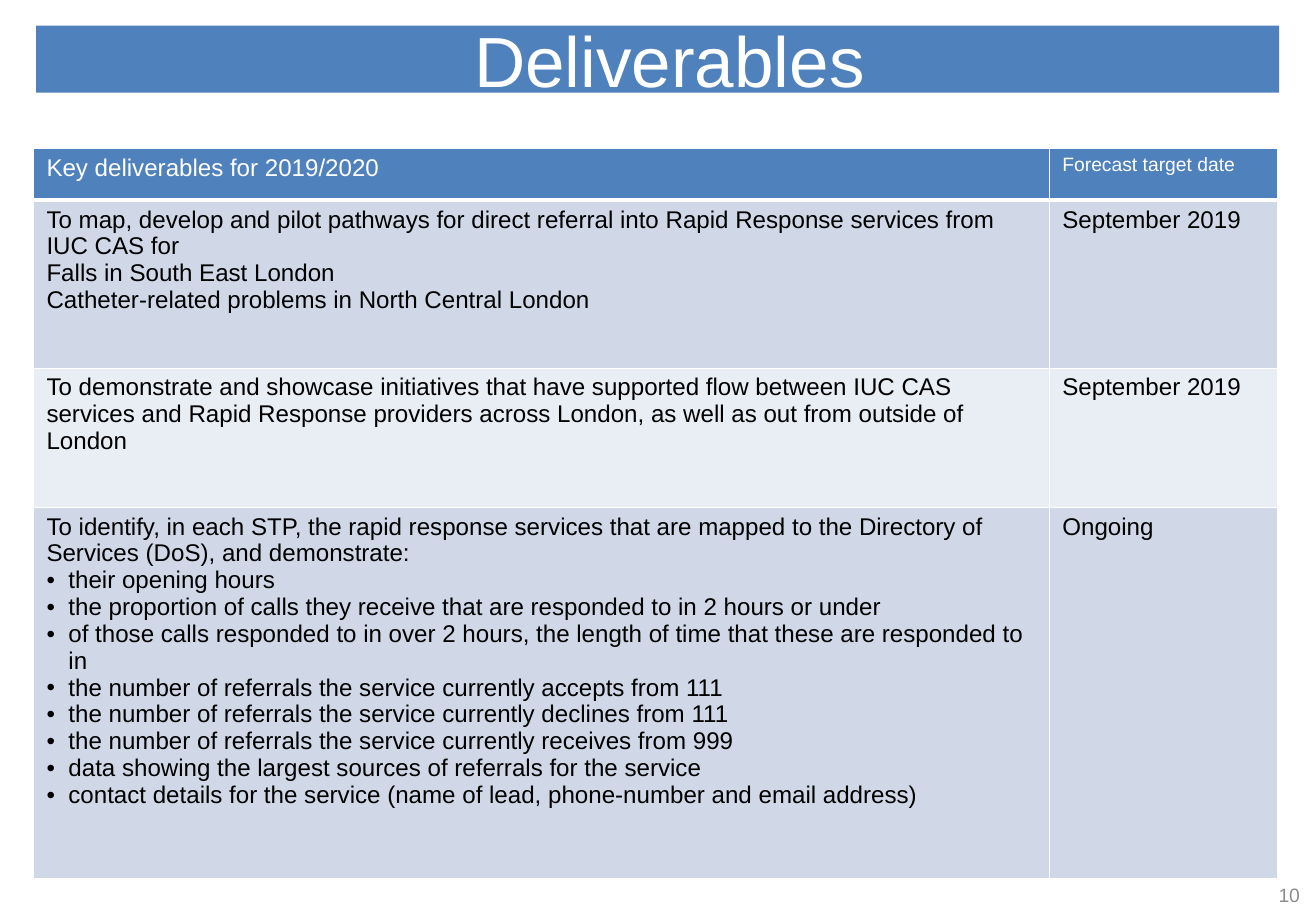
from lxml import etree
from pptx import Presentation
from pptx.dml.color import RGBColor
from pptx.enum.text import MSO_ANCHOR, MSO_AUTO_SIZE, PP_ALIGN
from pptx.oxml.ns import qn
from pptx.util import Cm, Pt

MIDDLE, TOP = MSO_ANCHOR.MIDDLE, MSO_ANCHOR.TOP
LEFT, CENTER, RIGHT = PP_ALIGN.LEFT, PP_ALIGN.CENTER, PP_ALIGN.RIGHT
FIXED = MSO_AUTO_SIZE.NONE

COLORS = {"blue": "4F81BD", "dark": "D0D8E8", "light": "E9EDF4",
          "white": "FFFFFF", "black": "000000", "gray": "8C8C8C"}
PAD = {"margin_left": Cm(0.28), "margin_right": Cm(0.28),
       "margin_top": Cm(0.13), "margin_bottom": Cm(0.13)}
FRAME = {**PAD, "word_wrap": True, "auto_size": FIXED, "vertical_anchor": MIDDLE}
CELL = {**PAD, "margin_bottom": Cm(0.38), "vertical_anchor": TOP}
INDENT = Cm(0.48)

WIDTHS = [22.27, 5]
HEIGHTS = [1.14, 3.68, 3.05, 8.13]
ROWS = [
    (["Key deliverables for 2019/2020"], "Forecast target date"),
    (["To map, develop and pilot pathways for direct referral into Rapid Response "
      "services from IUC CAS for",
      "Falls in South East London",
      "Catheter-related problems in North Central London"], "September 2019"),
    (["To demonstrate and showcase initiatives that have supported flow between "
      "IUC CAS services and Rapid Response providers across London, as well as "
      "out from outside of London"], "September 2019"),
    (["To identify, in each STP, the rapid response services that are mapped to "
      "the Directory of Services (DoS), and demonstrate:",
      "• their opening hours",
      "• the proportion of calls they receive that are responded to in 2 hours or under",
      "• of those calls responded to in over 2 hours, the length of time that these "
      "are responded to in",
      "• the number of referrals the service currently accepts from 111",
      "• the number of referrals the service currently declines from 111",
      "• the number of referrals the service currently receives from 999",
      "• data showing the largest sources of referrals for the service",
      "• contact details for the service (name of lead, phone-number and email address)"],
     "Ongoing"),
]


def apply(item, values):
    for name, value in values.items():
        setattr(item, name, value)


def paint(fill, color):
    fill.solid()
    fill.fore_color.rgb = RGBColor.from_string(COLORS[color])


class Deck:
    """Hold the style and the current slide, and add elements to it."""

    def __init__(self, width, height):
        self.show = Presentation()
        apply(self.show, {"slide_width": Cm(width), "slide_height": Cm(height)})
        self.slide = self.show.slides.add_slide(self.show.slide_layouts[5])
        self.font = {"name": "Arial", "bold": False}

    def text(self, frame, lines, size, color, align=LEFT):
        for count, line in enumerate(lines):
            par = frame.add_paragraph() if count else frame.paragraphs[0]
            par.alignment = align
            if line.startswith("• "):
                self.bullet(par)
            run = par.add_run()
            run.text = line.removeprefix("• ")
            apply(run.font, {**self.font, "size": Pt(size)})
            run.font.color.rgb = RGBColor.from_string(COLORS[color])

    def bullet(self, par):
        props = par._p.get_or_add_pPr()
        props.set("marL", str(INDENT))
        props.set("indent", str(-INDENT))
        etree.SubElement(props, qn("a:buFont"), typeface="Arial")
        etree.SubElement(props, qn("a:buChar"), char="•")

    def title(self, text, left, top, width, height):
        shape = self.slide.shapes.title
        apply(shape, {"left": Cm(left), "top": Cm(top),
                      "width": Cm(width), "height": Cm(height)})
        paint(shape.fill, "blue")
        frame = shape.text_frame
        apply(frame, FRAME)
        self.text(frame, [text], 44.1, "white", CENTER)
        frame.paragraphs[0]._p.get_or_add_pPr().set("marL", str(Cm(0.53)))

    def label(self, text, left, top, width, height):
        box = self.slide.shapes.add_textbox(Cm(left), Cm(top), Cm(width), Cm(height))
        apply(box.text_frame, FRAME)
        self.text(box.text_frame, [text], 12, "gray", RIGHT)

    def border(self, cell, base):
        props = cell._tc.get_or_add_tcPr()
        for side, weight in zip("LRTB", (1, 1, 1, base)):
            line = etree.SubElement(props, qn(f"a:ln{side}"), w=str(Pt(weight)))
            fill = etree.SubElement(line, qn("a:solidFill"))
            etree.SubElement(fill, qn("a:srgbClr"), val=COLORS["white"])

    def table(self, rows, left, top):
        grid = self.slide.shapes.add_table(
            len(rows), len(WIDTHS), Cm(left), Cm(top),
            Cm(sum(WIDTHS)), Cm(sum(HEIGHTS))).table
        for column, width in zip(grid.columns, WIDTHS):
            column.width = Cm(width)
        for row, height in zip(grid.rows, HEIGHTS):
            row.height = Cm(height)
        for r, (goal, date) in enumerate(rows):
            shade = ("dark" if r % 2 else "light") if r else "blue"
            for c, lines in enumerate((goal, [date])):
                cell = grid.cell(r, c)
                self.border(cell, 1 if r else 3)
                paint(cell.fill, shade)
                apply(cell, CELL)
                size = 15 if r or c == 0 else 12
                self.text(cell.text_frame, lines, size, "black" if r else "white")


def main():
    deck = Deck(28.85, 20.14)
    deck.table(ROWS, 0.74, 3.25)
    deck.title("Deliverables", 0.79, 0.56, 27.25, 1.47)
    deck.label("10", 22.05, 19.08, 6.73, 1.07)
    deck.show.save("out.pptx")


if __name__ == "__main__":
    main()
